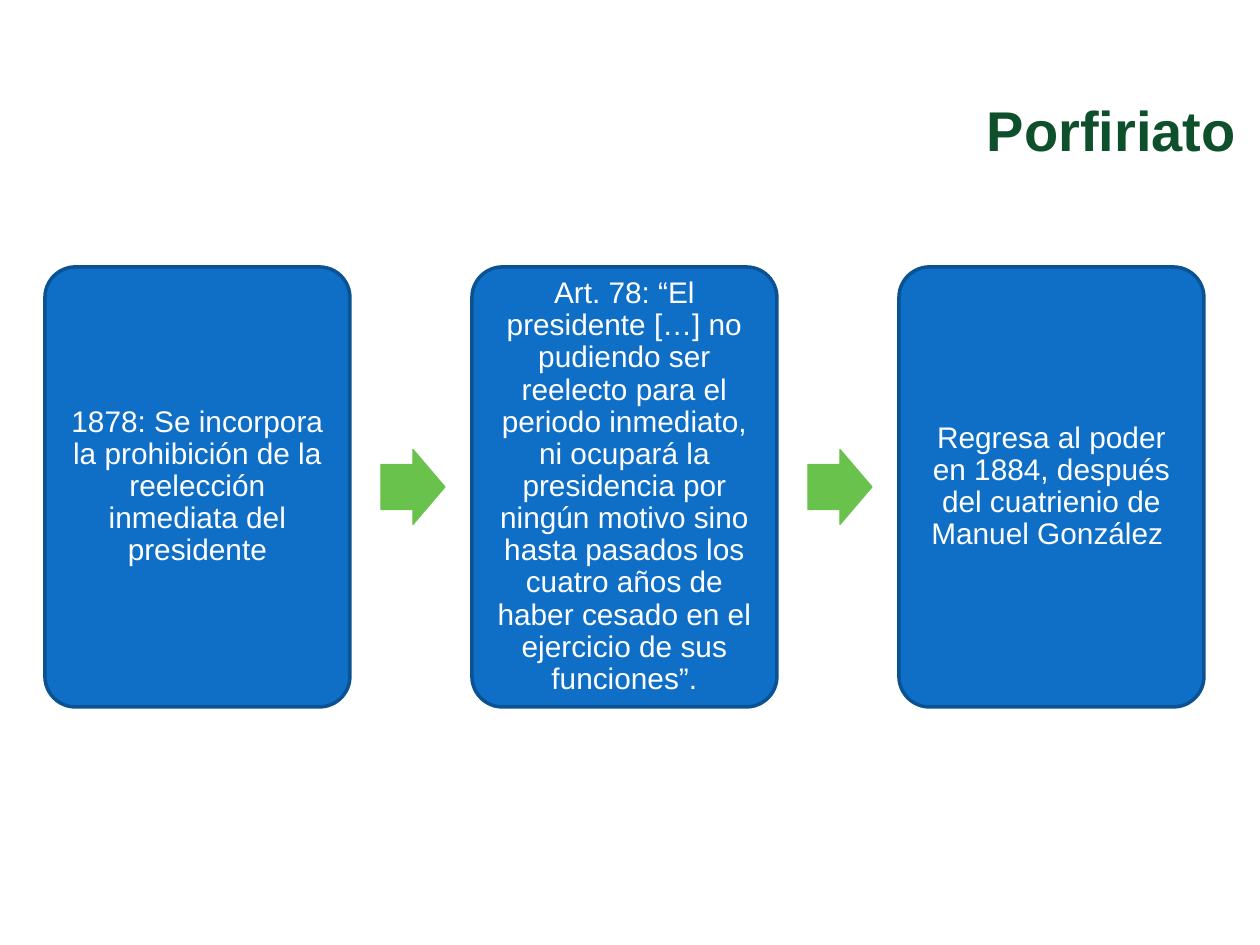
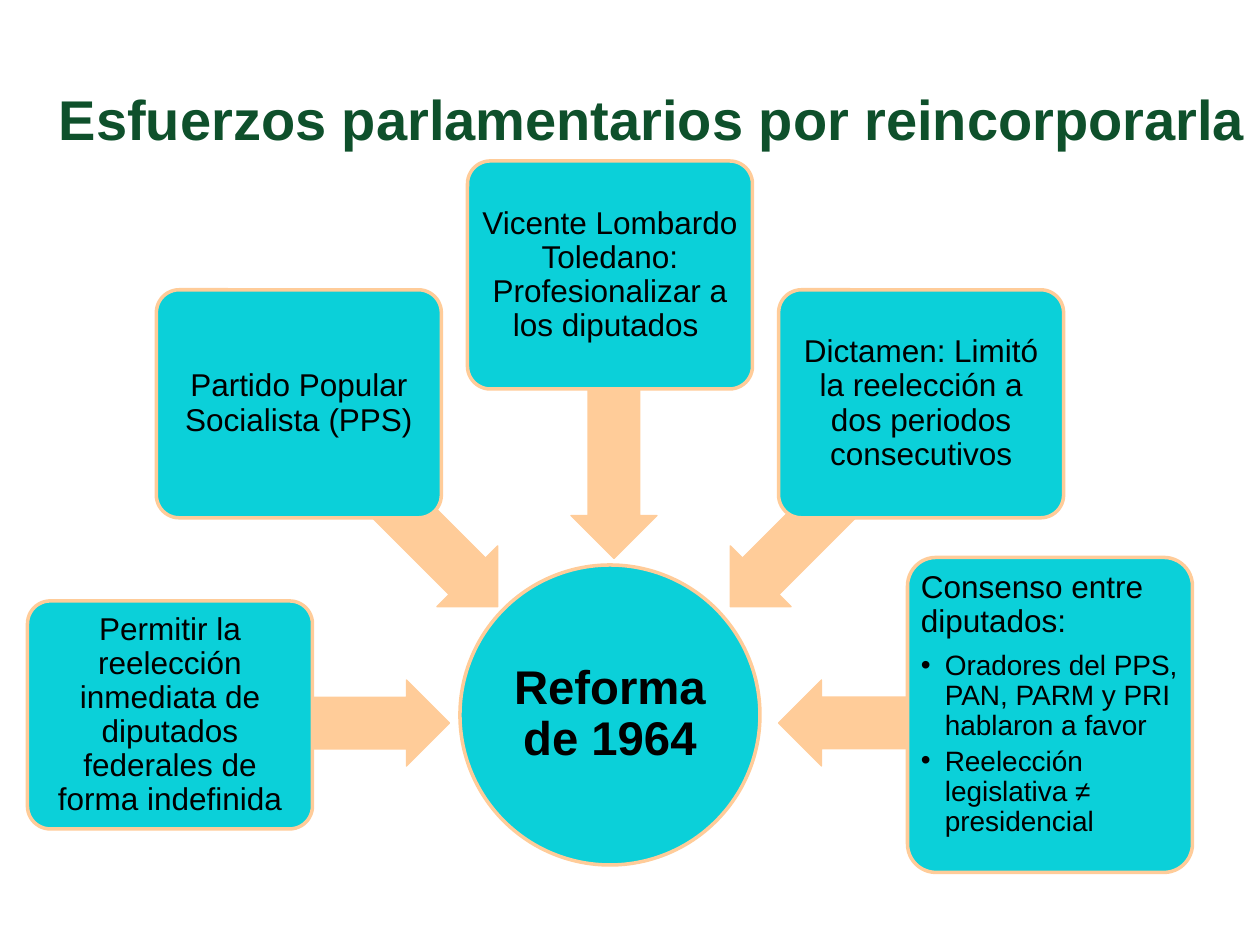
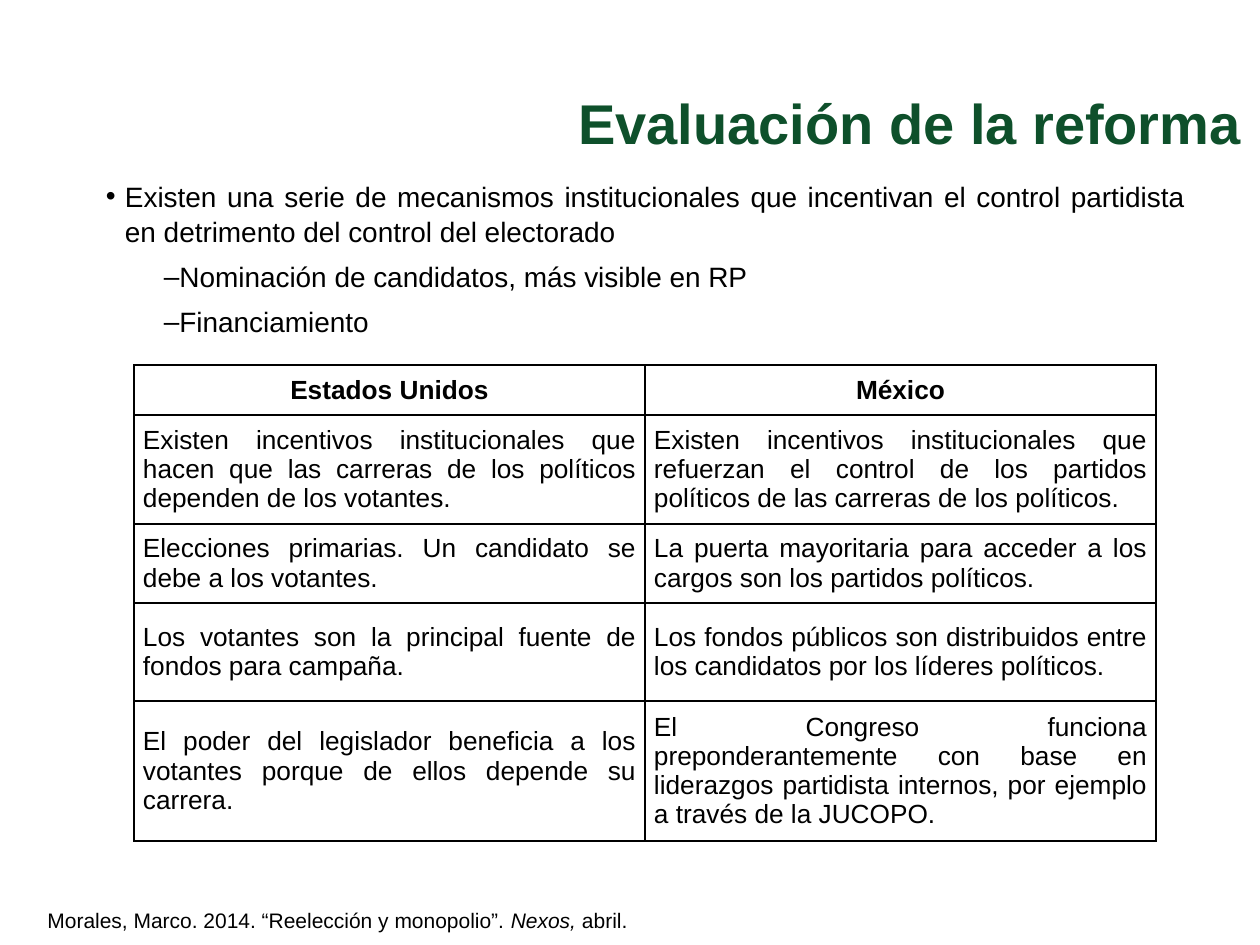
from math import cos, radians, sin

from lxml import etree
from pptx import Presentation
from pptx.dml.color import RGBColor
from pptx.enum.shapes import MSO_SHAPE
from pptx.enum.text import MSO_ANCHOR, MSO_AUTO_SIZE, PP_ALIGN
from pptx.oxml.ns import qn
from pptx.util import Pt

EMU_PER_PX = 914400 / 126
SLIDE_SIZE = (1260, 945)
TITLE_ONLY = 5
FONT = "Arial"

GREEN_TITLE = RGBColor(0x0E, 0x50, 0x2B)
BLUE = RGBColor(0x0F, 0x6F, 0xC6)
BLUE_EDGE = RGBColor(0x0B, 0x52, 0x92)
GREEN_ARROW = RGBColor(0x69, 0xC2, 0x4C)
CYAN = RGBColor(0x0B, 0xD0, 0xD9)
PEACH = RGBColor(0xFF, 0xCC, 0x99)
BLACK = RGBColor(0, 0, 0)
WHITE = RGBColor(0xFF, 0xFF, 0xFF)

ROUNDED = MSO_SHAPE.ROUNDED_RECTANGLE
OVAL = MSO_SHAPE.OVAL
RIGHT_ARROW = MSO_SHAPE.RIGHT_ARROW
LEFT_ARROW = MSO_SHAPE.LEFT_ARROW
LEFT, CENTER, RIGHT, JUSTIFY = (
    PP_ALIGN.LEFT, PP_ALIGN.CENTER, PP_ALIGN.RIGHT, PP_ALIGN.JUSTIFY)
TOP, MIDDLE = MSO_ANCHOR.TOP, MSO_ANCHOR.MIDDLE
NO_AUTOFIT = MSO_AUTO_SIZE.NONE

PORFIRIATO_STEPS = [
    "1878: Se incorpora la prohibición de la reelección inmediata del presidente",
    "Art. 78: “El presidente […] no pudiendo ser reelecto para el periodo inmediato, "
    "ni ocupará la presidencia por ningún motivo sino hasta pasados los cuatro años "
    "de haber cesado en el ejercicio de sus funciones”.",
    "Regresa al poder en 1884, después del cuatrienio de Manuel González ",
]
REFORM_FACTORS = [
    "Permitir la reelección inmediata de diputados federales de forma indefinida",
    "Partido Popular Socialista (PPS)",
    "Vicente Lombardo Toledano: Profesionalizar a los diputados ",
    "Dictamen: Limitó la reelección a dos periodos consecutivos",
    "Consenso entre diputados:",
]
CONSENSUS_POINTS = [
    "Oradores del PPS, PAN, PARM y PRI hablaron a favor",
    "Reelección legislativa ≠ presidencial",
]
MECHANISMS = [
    ("Existen una serie de mecanismos institucionales que incentivan el control "
     "partidista en detrimento del control del electorado", "•", 48, 19),
    ("Nominación de candidatos, más visible en RP", "–", 102, 15),
    ("Financiamiento", "–", 102, 15),
]
COMPARISON = [
    ("Estados Unidos", "México"),
    ("Existen incentivos institucionales que hacen que las carreras de los políticos "
     "dependen de los votantes.",
     "Existen incentivos institucionales que refuerzan el control de los partidos "
     "políticos de las carreras de los políticos."),
    ("Elecciones primarias. Un candidato se debe a los votantes.",
     "La puerta mayoritaria para acceder a los cargos son los partidos políticos."),
    ("Los votantes son la principal fuente de fondos para campaña.",
     "Los fondos públicos son distribuidos entre los candidatos por los líderes políticos."),
    ("El poder del legislador beneficia a los votantes porque de ellos depende su carrera.",
     "El Congreso funciona preponderantemente con base en liderazgos partidista "
     "internos, por ejemplo a través de la JUCOPO."),
]
COMPARISON_HEIGHTS = [50, 109, 79, 98, 140]
CITATION = [
    ("Morales, Marco. 2014. “Reelección y monopolio”. ", False),
    ("Nexos, ", True),
    ("abril.", False),
]


def px(length):
    return round(length * EMU_PER_PX)


def emu_box(box):
    return [px(length) for length in box]


def around(center, size):
    return (center[0] - size[0] / 2, center[1] - size[1] / 2, *size)


def style_paragraph(paragraph, size, color, align, bold=False, spacing=None):
    paragraph.alignment = align
    if spacing:
        paragraph.line_spacing = spacing
    for run in paragraph.runs:
        run.font.name = FONT
        run.font.size = Pt(size)
        run.font.bold = bold
        run.font.color.rgb = color


def set_bullet(paragraph, char, margin, hanging):
    properties = paragraph._p.get_or_add_pPr()
    properties.set("marL", str(px(margin)))
    properties.set("indent", str(-px(hanging)))
    etree.SubElement(properties, qn("a:buFont"), typeface=FONT)
    etree.SubElement(properties, qn("a:buChar"), char=char)


def set_frame(frame, inset, anchor):
    frame.word_wrap = True
    frame.auto_size = NO_AUTOFIT
    frame.vertical_anchor = anchor
    frame.margin_left = frame.margin_right = px(inset)
    frame.margin_top = frame.margin_bottom = px(inset)


def add_figure(slide, preset, box, fill, edge, width, adjustments=()):
    figure = slide.shapes.add_shape(preset, *emu_box(box))
    figure.shadow.inherit = False
    figure.fill.solid()
    figure.fill.fore_color.rgb = fill
    figure.line.color.rgb = edge
    figure.line.width = Pt(width)
    for index, value in enumerate(adjustments):
        figure.adjustments[index] = value
    return figure


def add_arrow(slide, preset, box, color):
    return add_figure(slide, preset, box, color, color, 0.75, (0.6, 0.5))


def add_label(figure, text, inset, size, color, align=CENTER, anchor=MIDDLE, bold=False):
    frame = figure.text_frame
    set_frame(frame, inset, anchor)
    frame.text = text
    style_paragraph(frame.paragraphs[0], size, color, align, bold, 0.9)
    return frame


def add_titled_slide(deck, text, box):
    slide = deck.slides.add_slide(deck.slide_layouts[TITLE_ONLY])
    title = slide.shapes.title
    title.left, title.top, title.width, title.height = emu_box(box)
    frame = title.text_frame
    set_frame(frame, 13, TOP)
    frame.margin_top = px(19)
    frame.text = text
    style_paragraph(frame.paragraphs[0], 32, GREEN_TITLE, RIGHT, bold=True)
    return slide


def add_step_flow(slide, box):
    left, top, width, height = box
    step_width, arrow_width, arrow_height = 305, 64, 75
    pitch = (width - step_width) / (len(PORFIRIATO_STEPS) - 1)
    for index, text in enumerate(PORFIRIATO_STEPS):
        x = left + index * pitch
        if index:
            arrow_box = (x - 91, top + (height - arrow_height) / 2, arrow_width, arrow_height)
            add_arrow(slide, RIGHT_ARROW, arrow_box, GREEN_ARROW)
        step = add_figure(slide, ROUNDED, (x, top, step_width, height),
                          BLUE, BLUE_EDGE, 2, (0.1,))
        add_label(step, text, 9, 17, WHITE)


def add_consensus(slide, center, text):
    consensus = add_figure(slide, ROUNDED, around(center, (285, 315)), CYAN, PEACH, 2, (0.1,))
    frame = add_label(consensus, text, 5, 18, BLACK, LEFT, TOP)
    frame.paragraphs[0].space_after = Pt(7)
    for point in CONSENSUS_POINTS:
        paragraph = frame.add_paragraph()
        paragraph.text = point
        set_bullet(paragraph, "•", 24, 24)
        style_paragraph(paragraph, 16, BLACK, LEFT, spacing=0.9)
        paragraph.space_after = Pt(3)


def add_reform_wheel(slide, hub):
    hub_x, hub_y = hub
    reform = add_figure(slide, OVAL, around(hub, (300, 300)), CYAN, PEACH, 2)
    add_label(reform, "Reforma de 1964", 3, 27, BLACK, bold=True)
    for index, text in enumerate(REFORM_FACTORS):
        angle = 180 + 45 * index
        dx, dy = cos(radians(angle)), sin(radians(angle))
        arrow_center = (hub_x + 4 + 302 * dx, hub_y + 8 + 302 * dy)
        arrow = add_arrow(slide, LEFT_ARROW, around(arrow_center, (275, 86)), PEACH)
        arrow.rotation = angle % 360
        center = (hub_x + 440 * dx, hub_y + 440 * dy)
        if index == len(REFORM_FACTORS) - 1:
            add_consensus(slide, center, text)
        else:
            factor = add_figure(slide, ROUNDED, around(center, (285, 228)),
                                CYAN, PEACH, 2, (0.1,))
            add_label(factor, text, 5, 18, BLACK)


def add_mechanisms(slide, box):
    frame = slide.shapes.add_textbox(*emu_box(box)).text_frame
    set_frame(frame, 13, TOP)
    for index, (text, bullet, margin, hanging) in enumerate(MECHANISMS):
        paragraph = frame.add_paragraph() if index else frame.paragraphs[0]
        paragraph.text = text
        set_bullet(paragraph, bullet, margin, hanging)
        style_paragraph(paragraph, 16, BLACK, JUSTIFY, spacing=1.05)
        if index:
            paragraph.space_before = Pt(5.6)


def set_borders(cell):
    properties = cell._tc.get_or_add_tcPr()
    for position, side in enumerate(("lnL", "lnR", "lnT", "lnB")):
        border = etree.Element(qn(f"a:{side}"), w=str(Pt(1)))
        fill = etree.SubElement(border, qn("a:solidFill"))
        etree.SubElement(fill, qn("a:srgbClr"), val=str(BLACK))
        properties.insert(position, border)


def add_comparison(slide, box):
    table = slide.shapes.add_table(len(COMPARISON), 2, *emu_box(box)).table
    for column in table.columns:
        column.width = px(box[2] / 2)
    for row_index, (texts, height) in enumerate(zip(COMPARISON, COMPARISON_HEIGHTS)):
        table.rows[row_index].height = px(height)
        is_header = row_index == 0
        for column_index, text in enumerate(texts):
            cell = table.cell(row_index, column_index)
            cell.text = text
            cell.vertical_anchor = MIDDLE
            cell.margin_left = cell.margin_right = px(9)
            cell.margin_top = cell.margin_bottom = px(9)
            cell.fill.solid()
            cell.fill.fore_color.rgb = WHITE
            set_borders(cell)
            style_paragraph(cell.text_frame.paragraphs[0], 15, BLACK,
                            CENTER if is_header else JUSTIFY, is_header)


def add_citation(slide, box):
    citation = slide.shapes.add_textbox(*emu_box(box))
    citation.fill.solid()
    citation.fill.fore_color.rgb = WHITE
    citation.text_frame.word_wrap = True
    paragraph = citation.text_frame.paragraphs[0]
    for text, italic in CITATION:
        run = paragraph.add_run()
        run.text = text
        run.font.italic = italic
    style_paragraph(paragraph, 12, BLACK, LEFT)


def main():
    deck = Presentation()
    deck.slide_width, deck.slide_height = emu_box(SLIDE_SIZE)

    porfiriato = add_titled_slide(deck, "Porfiriato", (115, 76, 1134, 88))
    add_step_flow(porfiriato, (45, 267, 1159, 440))

    efforts = add_titled_slide(
        deck, "Esfuerzos parlamentarios por reincorporarla", (43, 66, 1216, 55))
    add_reform_wheel(efforts, (610, 715))

    evaluation = add_titled_slide(deck, "Evaluación de la reforma", (121, 69, 1134, 88))
    add_comparison(evaluation, (134, 365, 1022, sum(COMPARISON_HEIGHTS)))
    add_citation(evaluation, (35, 901, 992, 38))
    add_mechanisms(evaluation, (64, 165, 1134, 190))

    deck.save("out.pptx")


if __name__ == "__main__":
    main()
